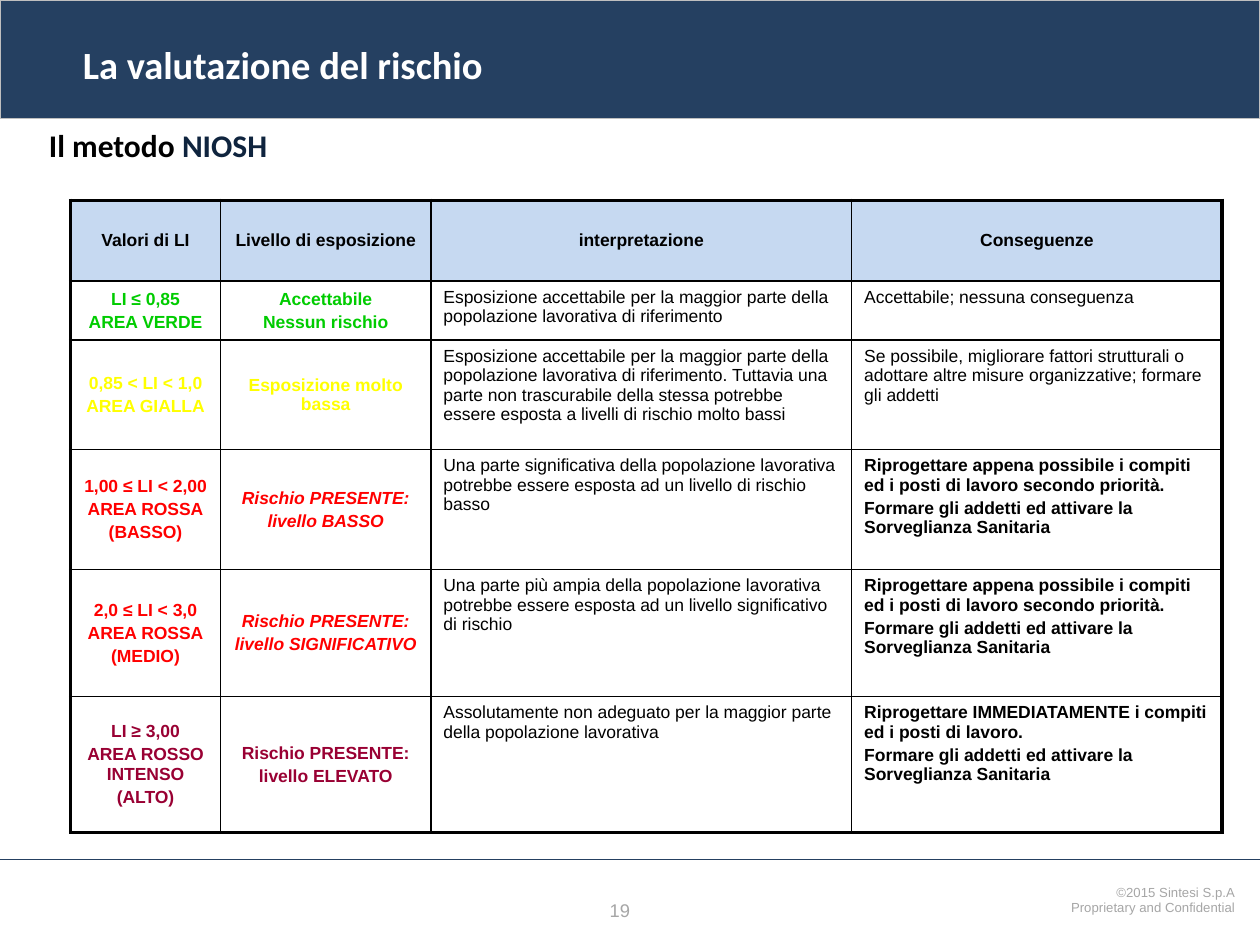
import pptx
import pptx.dml.color
import pptx.enum.shapes
import pptx.enum.text
import pptx.oxml
import pptx.oxml.ns
import pptx.util

RGBColor = pptx.dml.color.RGBColor
ALIGN = pptx.enum.text.PP_ALIGN
ANCHOR = pptx.enum.text.MSO_ANCHOR

WHITE = RGBColor(0xFF, 0xFF, 0xFF)
BLACK = RGBColor(0x00, 0x00, 0x00)
BLUE = RGBColor(0x25, 0x40, 0x61)
NAVY = RGBColor(0x0F, 0x24, 0x3E)
PALE_BLUE = RGBColor(0xC6, 0xD9, 0xF1)
SILVER = RGBColor(0xBF, 0xBF, 0xBF)
GREY = RGBColor(0xA6, 0xA6, 0xA6)
GREEN = RGBColor(0x00, 0xCC, 0x00)
YELLOW = RGBColor(0xFF, 0xFF, 0x00)
RED = RGBColor(0xFF, 0x00, 0x00)
CRIMSON = RGBColor(0x99, 0x00, 0x33)

SLIDE_WIDTH = pptx.util.Inches(10)
SLIDE_HEIGHT = pptx.util.Inches(7.5)
COLUMN_WIDTHS = [1.19, 1.67, 3.34, 2.94]
ROW_HEIGHTS = [0.64, 0.47, 0.87, 0.95, 1.01, 1.08]
THIN, THICK = 1, 2.25

HEADERS = ["Valori di LI", "Livello di esposizione", "interpretazione", "Conseguenze"]
REDESIGN = "Riprogettare appena possibile i compiti ed i posti di lavoro secondo priorità."
TRAINING = "Formare gli addetti ed attivare la Sorveglianza Sanitaria"
PRESENT = "Rischio PRESENTE:"

# Colour, italic level, bold consequences, then the four cells of the row
RISK_ROWS = [
    (GREEN, False, False,
     ["LI ≤ 0,85", "AREA VERDE"],
     ["Accettabile", "Nessun rischio"],
     ["Esposizione accettabile per la maggior parte della popolazione lavorativa "
      "di riferimento"],
     ["Accettabile; nessuna conseguenza"]),
    (YELLOW, False, False,
     ["0,85 < LI < 1,0", "AREA GIALLA"],
     ["Esposizione molto bassa"],
     ["Esposizione accettabile per la maggior parte della popolazione lavorativa "
      "di riferimento. Tuttavia una parte non trascurabile della stessa potrebbe "
      "essere esposta a livelli di rischio molto bassi"],
     ["Se possibile, migliorare fattori strutturali o adottare altre misure "
      "organizzative; formare gli addetti"]),
    (RED, True, True,
     ["1,00 ≤ LI < 2,00", "AREA ROSSA", "(BASSO)"],
     [PRESENT, "livello BASSO"],
     ["Una parte significativa della popolazione lavorativa potrebbe essere "
      "esposta ad un livello di rischio basso"],
     [REDESIGN, TRAINING]),
    (RED, True, True,
     ["2,0 ≤ LI < 3,0", "AREA ROSSA", "(MEDIO)"],
     [PRESENT, "livello SIGNIFICATIVO"],
     ["Una parte più ampia della popolazione lavorativa potrebbe essere esposta "
      "ad un livello significativo di rischio"],
     [REDESIGN, TRAINING]),
    (CRIMSON, False, True,
     ["LI ≥ 3,00", "AREA ROSSO INTENSO", "(ALTO)"],
     [PRESENT, "livello ELEVATO"],
     ["Assolutamente non adeguato per la maggior parte della popolazione lavorativa"],
     ["Riprogettare IMMEDIATAMENTE i compiti ed i posti di lavoro.", TRAINING]),
]


def across(percent):
    return round(SLIDE_WIDTH * percent / 100)


def down(percent):
    return round(SLIDE_HEIGHT * percent / 100)


def area(left, top, width, height):
    """Turn percentages of the slide into lengths."""
    return across(left), down(top), across(width), down(height)


def write(frame, paragraphs, *, size, color, font="Arial", bold=False, italic=False,
          align=ALIGN.LEFT, gap=0, line_spacing=None):
    """Fill a frame; each paragraph is a list of (text, colour) runs or a string."""
    for index, content in enumerate(paragraphs):
        paragraph = frame.add_paragraph() if index else frame.paragraphs[0]
        paragraph.alignment = align
        paragraph.line_spacing = line_spacing
        if index:
            paragraph.space_before = pptx.util.Pt(gap)
        runs = [(content, color)] if isinstance(content, str) else content
        for text, run_color in runs:
            run = paragraph.add_run()
            run.text = text
            run.font.name = font
            run.font.size = pptx.util.Pt(size)
            run.font.bold = bold
            run.font.italic = italic
            run.font.color.rgb = run_color


def add_text(slide, place, paragraphs, *, wrap=True, anchor=ANCHOR.TOP, **style):
    frame = slide.shapes.add_textbox(*place).text_frame
    frame.word_wrap = wrap
    frame.vertical_anchor = anchor
    write(frame, paragraphs, **style)


def add_band(slide):
    band = slide.shapes.add_shape(
        pptx.enum.shapes.MSO_SHAPE.RECTANGLE, *area(0, 0, 100, 12.53))
    band.shadow.inherit = False
    band.fill.solid()
    band.fill.fore_color.rgb = BLUE
    band.line.color.rgb = SILVER
    band.line.width = pptx.util.Pt(0.75)


def add_footer_rule(slide):
    height = down(90.93)
    rule = slide.shapes.add_connector(
        pptx.enum.shapes.MSO_CONNECTOR.STRAIGHT, 0, height, SLIDE_WIDTH, height)
    rule.line.color.rgb = BLUE
    rule.line.width = pptx.util.Pt(0.5)
    pptx.oxml.ns.qn("a:effectLst")
    rule._element.spPr.append(pptx.oxml.parse_xml(
        f'<a:effectLst {pptx.oxml.ns.nsdecls("a")}/>'))


def set_borders(cell, widths):
    """Draw black borders; widths are given in the order left, right, top, bottom."""
    properties = cell._tc.get_or_add_tcPr()
    for side, width in zip("LRTB", widths):
        properties.append(pptx.oxml.parse_xml(
            f'<a:ln{side} {pptx.oxml.ns.nsdecls("a")} w="{pptx.util.Pt(width)}">'
            f'<a:solidFill><a:srgbClr val="{BLACK}"/></a:solidFill></a:ln{side}>'))


def fill_cell(cell, paragraphs, *, centered, fill=None, **style):
    if centered:
        cell.vertical_anchor = ANCHOR.MIDDLE
    if fill is None:
        cell.fill.background()
    else:
        cell.fill.solid()
        cell.fill.fore_color.rgb = fill
    write(cell.text_frame, paragraphs, size=10, gap=2,
          align=ALIGN.CENTER if centered else ALIGN.LEFT, **style)


def add_risk_table(slide):
    last_row, last_column = len(ROW_HEIGHTS) - 1, len(COLUMN_WIDTHS) - 1
    table = slide.shapes.add_table(
        len(ROW_HEIGHTS), len(COLUMN_WIDTHS), across(5.6), down(21.2),
        pptx.util.Inches(sum(COLUMN_WIDTHS)), pptx.util.Inches(sum(ROW_HEIGHTS))).table
    table.first_row = table.horz_banding = False
    for column, width in zip(table.columns, COLUMN_WIDTHS):
        column.width = pptx.util.Inches(width)
    for row, height in zip(table.rows, ROW_HEIGHTS):
        row.height = pptx.util.Inches(height)
    for y, row in enumerate(table.rows):
        for x, cell in enumerate(row.cells):
            outer = (x == 0, x == last_column, y == 0, y == last_row)
            set_borders(cell, [THICK if edge else THIN for edge in outer])

    for x, header in enumerate(HEADERS):
        fill_cell(table.cell(0, x), [header], centered=True, fill=PALE_BLUE,
                  color=BLACK, bold=True)
    for y, (color, italic, strong, values, level, meaning, action) in enumerate(RISK_ROWS, 1):
        fill_cell(table.cell(y, 0), values, centered=True, color=color, bold=True)
        fill_cell(table.cell(y, 1), level, centered=True, color=color, bold=True,
                  italic=italic)
        fill_cell(table.cell(y, 2), meaning, centered=False, color=BLACK)
        fill_cell(table.cell(y, 3), action, centered=False, color=BLACK, bold=strong)


def main():
    presentation = pptx.Presentation()
    presentation.slide_width = SLIDE_WIDTH
    presentation.slide_height = SLIDE_HEIGHT
    slide = presentation.slides.add_slide(presentation.slide_layouts[6])

    add_text(slide, area(47.4, 94.53, 5.2, 3.73), ["19"], size=10.5, color=GREY)
    add_text(slide, area(72.4, 93.07, 26.6, 4.53),
             ["©2015 Sintesi S.p.A", "Proprietary and Confidential"],
             size=7.5, color=GREY, align=ALIGN.RIGHT, line_spacing=0.95)
    add_band(slide)
    add_footer_rule(slide)
    add_text(slide, area(5.6, 2.53, 86.2, 8.53), ["La valutazione del rischio"],
             size=22, color=WHITE, font="Calibri", bold=True, anchor=ANCHOR.MIDDLE)
    add_risk_table(slide)
    add_text(slide, area(2.9, 12.67, 19.5, 5.33),
             [[("Il metodo ", BLACK), ("NIOSH", NAVY)]],
             size=18, color=BLACK, font="Calibri", bold=True, wrap=False)
    presentation.save("out.pptx")


if __name__ == "__main__":
    main()
